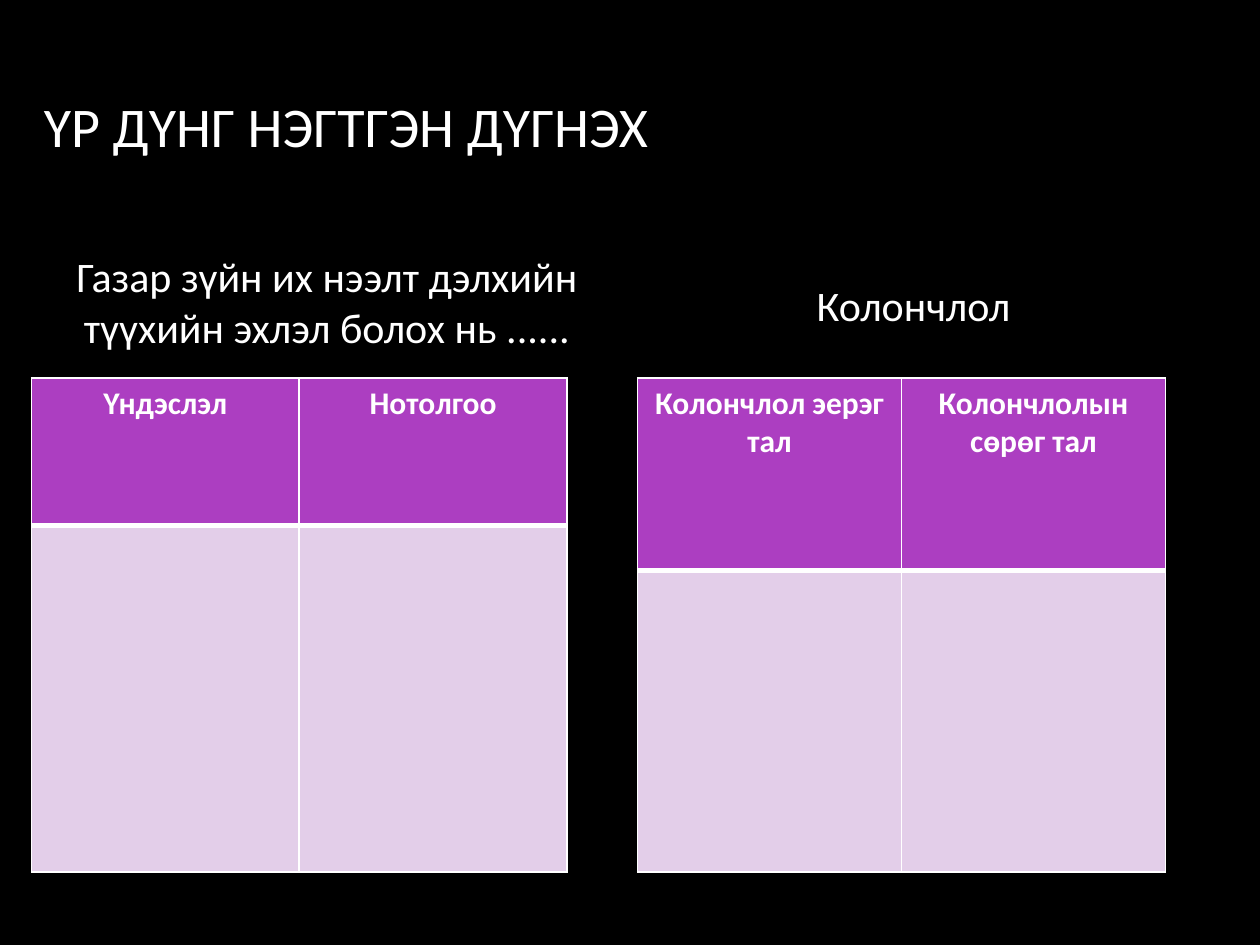
from dataclasses import dataclass

from lxml import etree
from pptx import Presentation
from pptx.dml.color import RGBColor
from pptx.enum.text import MSO_ANCHOR, PP_ALIGN
from pptx.oxml.ns import qn
from pptx.util import Inches, Pt

LEFT, CENTER = PP_ALIGN.LEFT, PP_ALIGN.CENTER
TOP, MIDDLE, BOTTOM = MSO_ANCHOR.TOP, MSO_ANCHOR.MIDDLE, MSO_ANCHOR.BOTTOM


@dataclass(frozen=True)
class Theme:
    """Colours, font and type sizes of the slide."""
    font: str = "Calibri"
    background: str = "000000"
    text: str = "FFFFFF"
    border: str = "FFFFFF"
    header: str = "AC3EC1"
    body: str = "E3CEE9"
    title_size: int = 32
    heading_size: int = 24
    cell_size: int = 18
    thin: int = 1
    thick: int = 3


THEME = Theme()


def write(tf, text, size, bold=False, align=LEFT, after=0):
    """Write one formatted paragraph into a text frame."""
    tf.word_wrap = True
    p = tf.paragraphs[0]
    p.alignment = align
    p.space_after = Pt(after)
    r = p.add_run()
    r.text = text
    r.font.name = THEME.font
    r.font.size = Pt(size)
    r.font.bold = bold
    r.font.color.rgb = RGBColor.from_string(THEME.text)


def add_text(s, box, text, anchor, **fmt):
    """Add a text box filling the given box."""
    tf = s.shapes.add_textbox(*map(Inches, box)).text_frame
    tf.vertical_anchor = anchor
    write(tf, text, **fmt)


def style_cell(cell, fill, top, bottom):
    """Give a cell its fill and border widths."""
    tc_pr = cell._tc.get_or_add_tcPr()
    widths = {"a:lnL": THEME.thin, "a:lnR": THEME.thin, "a:lnT": top, "a:lnB": bottom}
    for tag, width in widths.items():
        ln = etree.SubElement(tc_pr, qn(tag), w=str(Pt(width)))
        solid = etree.SubElement(ln, qn("a:solidFill"))
        etree.SubElement(solid, qn("a:srgbClr"), val=THEME.border)
    cell.fill.solid()
    cell.fill.fore_color.rgb = RGBColor.from_string(fill)


def add_comparison(s, box, headers, header_height):
    """Add a table with a header row above one empty row."""
    left, top, width, height = box
    table = s.shapes.add_table(2, len(headers), *map(Inches, box)).table
    for col in table.columns:
        col.width = Inches(width / len(headers))
    table.rows[0].height = Inches(header_height)
    table.rows[1].height = Inches(height - header_height)
    for i, text in enumerate(headers):
        head, body = table.cell(0, i), table.cell(1, i)
        style_cell(head, THEME.header, THEME.thin, THEME.thick)
        style_cell(body, THEME.body, THEME.thick, THEME.thin)
        head.vertical_anchor = TOP
        write(head.text_frame, text, THEME.cell_size, bold=True, align=CENTER)


def add_section(s, heading_box, heading, table_box, headers, header_height):
    """Add a heading and the comparison table below it."""
    add_text(s, heading_box, heading, BOTTOM,
             size=THEME.heading_size, align=CENTER, after=10)
    add_comparison(s, table_box, headers, header_height)


def main():
    """Build and save the slide."""
    prs = Presentation()
    prs.slide_width, prs.slide_height = Inches(10), Inches(7.5)
    s = prs.slides.add_slide(prs.slide_layouts[6])
    s.background.fill.solid()
    s.background.fill.fore_color.rgb = RGBColor.from_string(THEME.background)

    add_text(s, (0.25, 0.33, 9.42, 1.33), "ҮР ДҮНГ НЭГТГЭН ДҮГНЭХ", MIDDLE,
             size=THEME.title_size)
    add_section(s, (0.25, 1.67, 4.69, 1.17),
                "Газар зүйн их нээлт дэлхийн түүхийн эхлэл болох нь ......",
                (0.25, 3, 4.25, 3.92), ("Үндэслэл", "Нотолгоо"), 1.17)
    add_section(s, (5.25, 1.67, 4, 1), "Колончлол", (5.06, 3, 4.19, 3.92),
                ("Колончлол эерэг тал", "Колончлолын сөрөг тал"), 1.53)
    prs.save("out.pptx")


if __name__ == "__main__":
    main()
